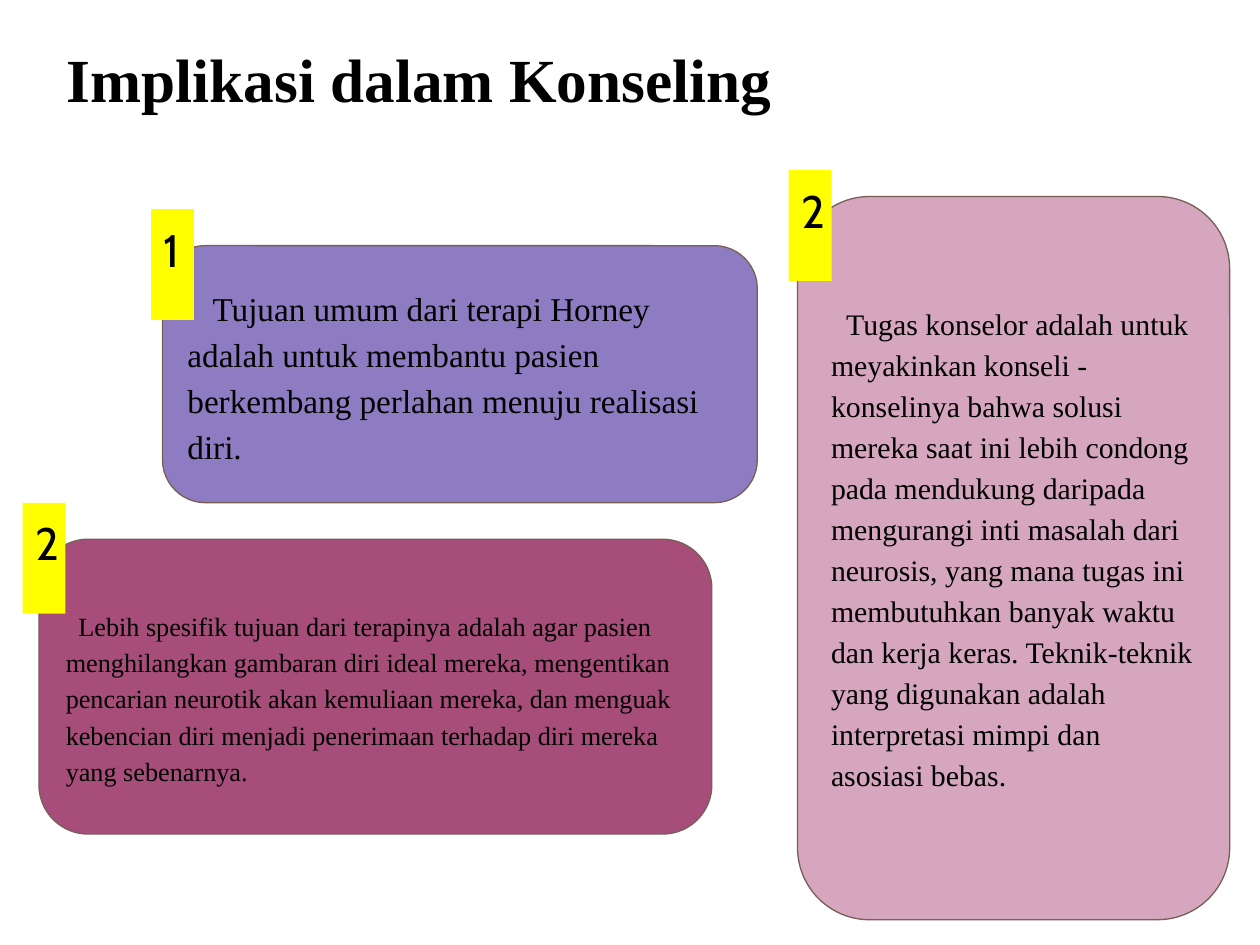
import pptx
import pptx.util
import pptx.dml.color
import pptx.enum.shapes
import pptx.enum.text

Inches, Pt = pptx.util.Inches, pptx.util.Pt
SHAPE = pptx.enum.shapes.MSO_SHAPE
ANCHOR = pptx.enum.text.MSO_ANCHOR
LEFT = pptx.enum.text.PP_ALIGN.LEFT

COLORS = {
    "text": "000000",
    "outline": "775F55",
    "number": "FFFF00",
    "goal": "8E7CC3",
    "specific": "A64D79",
    "task": "D5A6BD",
}


def color(name):
    return pptx.dml.color.RGBColor.from_string(COLORS[name])


def write(shape, text, size, font, anchor=ANCHOR.TOP, top=0.1, bottom=0.1, bold=False):
    """Put one left-aligned paragraph in a shape and return the paragraph."""
    frame = shape.text_frame
    frame.text = text
    frame.word_wrap = True
    frame.auto_size = pptx.enum.text.MSO_AUTO_SIZE.NONE
    frame.vertical_anchor = anchor
    frame.margin_left = frame.margin_right = Inches(0.1)
    frame.margin_top, frame.margin_bottom = Inches(top), Inches(bottom)
    paragraph = frame.paragraphs[0]
    paragraph.alignment = LEFT
    run_font = paragraph.runs[0].font
    run_font.name, run_font.size, run_font.bold = font, Pt(size), bold
    run_font.color.rgb = color("text")
    return paragraph


deck = pptx.Presentation()
deck.slide_width, deck.slide_height = Inches(10), Inches(7.5)
slide = deck.slides.add_slide(deck.slide_layouts[5])

# Title
title = slide.shapes.title
title.left, title.top = Inches(0.43), Inches(0.23)
title.width, title.height = Inches(8.85), Inches(0.96)
write(title, "Implikasi dalam Konseling", 35, "Times New Roman", bold=True)

# Cards: fill, box, text size, first-line indent, top and bottom margin, text
cards = [
    ("goal", (1.29, 1.95, 4.72, 2.04), 19, 0.2, 0.1, 0.1,
     "Tujuan umum dari terapi Horney adalah untuk membantu pasien "
     "berkembang perlahan menuju realisasi diri."),
    ("specific", (0.31, 4.28, 5.34, 2.34), 15, 0.1, 0.25, 0.1,
     "Lebih spesifik tujuan dari terapinya adalah agar pasien menghilangkan "
     "gambaran diri ideal mereka, mengentikan pencarian neurotik akan kemuliaan "
     "mereka, dan menguak kebencian diri menjadi penerimaan terhadap diri mereka "
     "yang sebenarnya."),
    ("task", (6.33, 1.56, 3.43, 5.74), 17, 0.12, 0.1, 0.28,
     "Tugas konselor adalah untuk meyakinkan konseli - konselinya bahwa solusi "
     "mereka saat ini lebih condong pada mendukung daripada mengurangi inti "
     "masalah dari neurosis, yang mana tugas ini membutuhkan banyak waktu dan "
     "kerja keras. Teknik-teknik yang digunakan adalah interpretasi mimpi dan "
     "asosiasi bebas."),
]
for fill, box, size, indent, top, bottom, text in cards:
    card = slide.shapes.add_shape(SHAPE.ROUNDED_RECTANGLE, *map(Inches, box))
    card.shadow.inherit = False
    card.fill.solid()
    card.fill.fore_color.rgb = color(fill)
    card.line.color.rgb = color("outline")
    card.line.width = Pt(0.75)
    paragraph = write(card, text, size, "Times New Roman", ANCHOR.MIDDLE, top, bottom)
    paragraph.line_spacing = 1.15
    paragraph_properties = paragraph._p.get_or_add_pPr()
    paragraph_properties.set("marL", "0")
    paragraph_properties.set("indent", str(Inches(indent)))

# Number tags on the card corners
for digit, left, top in [("1", 1.2, 1.66), ("2", 0.18, 3.99), ("2", 6.26, 1.35)]:
    tag = slide.shapes.add_shape(
        SHAPE.RECTANGLE, Inches(left), Inches(top), Inches(0.34), Inches(0.88))
    tag.shadow.inherit = False
    tag.fill.solid()
    tag.fill.fore_color.rgb = color("number")
    tag.line.fill.background()
    write(tag, digit, 26, "Cabin")

deck.save("out.pptx")
